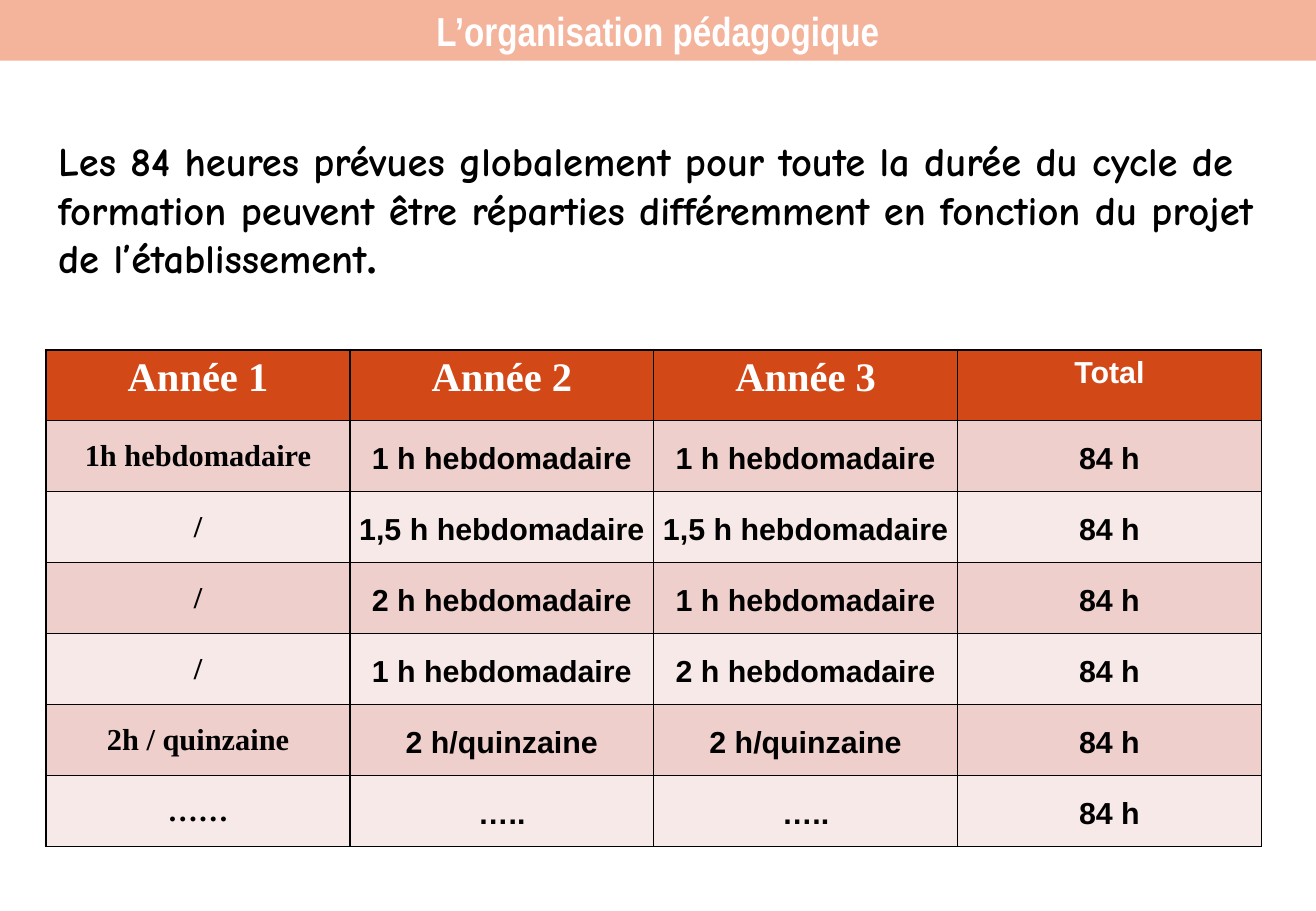
from lxml import etree
from pptx import Presentation
from pptx.dml.color import RGBColor
from pptx.enum.text import MSO_ANCHOR, MSO_AUTO_SIZE, PP_ALIGN
from pptx.oxml.ns import qn
from pptx.util import Inches, Pt

CENTER, LEFT = PP_ALIGN.CENTER, PP_ALIGN.LEFT
TOP, MIDDLE = MSO_ANCHOR.TOP, MSO_ANCHOR.MIDDLE
NO_FIT = MSO_AUTO_SIZE.NONE

COLORS = {
    "banner": "F4B39B", "header": "D34817", "odd": "EFCFCC", "even": "F7E9E8",
    "light": "FFFFFF", "dark": "000000",
}
SANS, NARROW, SERIF, COMIC = "Arial", "Arial Narrow", "Times New Roman", "Comic Neue"

TITLE = "L’organisation pédagogique"
INTRO = ("Les 84 heures prévues globalement pour toute la durée du cycle de "
         "formation peuvent être réparties différemment en fonction du projet "
         "de l’établissement")
SCHEDULE = [
    ("Année 1", "Année 2", "Année 3", "Total"),
    ("1h hebdomadaire", "1 h hebdomadaire", "1 h hebdomadaire", "84 h"),
    ("/", "1,5 h hebdomadaire", "1,5 h hebdomadaire", "84 h"),
    ("/", "2 h hebdomadaire", "1 h hebdomadaire", "84 h"),
    ("/", "1 h hebdomadaire", "2 h hebdomadaire", "84 h"),
    ("2h / quinzaine", "2 h/quinzaine", "2 h/quinzaine", "84 h"),
    ("……", "…..", "…..", "84 h"),
]


def rgb(name):
    return RGBColor.from_string(COLORS[name])


def set_attrs(target, values):
    for name, value in values.items():
        setattr(target, name, value)


def add_run(p, text, font, size, color):
    r = p.add_run()
    r.text = text
    set_attrs(r.font, {"name": font, "size": Pt(size), "bold": True})
    r.font.color.rgb = rgb(color)


def place(sp, box):
    sp.left, sp.top, sp.width, sp.height = (Inches(v) for v in box)


def add_title(s, box):
    sp = s.shapes.title
    place(sp, box)
    sp.fill.solid()
    sp.fill.fore_color.rgb = rgb("banner")
    tf = sp.text_frame
    set_attrs(tf, {"auto_size": NO_FIT, "vertical_anchor": TOP, "word_wrap": True})
    p = tf.paragraphs[0]
    p.alignment = CENTER
    add_run(p, TITLE, NARROW, 24, "light")


def add_intro(s, box):
    tf = s.shapes.add_textbox(*(Inches(v) for v in box)).text_frame
    tf.word_wrap = True
    p = tf.paragraphs[0]
    p.alignment = LEFT
    add_run(p, INTRO, COMIC, 24, "dark")
    add_run(p, ".", SERIF, 24, "dark")


def add_borders(cell):
    tcPr = cell._tc.get_or_add_tcPr()
    # Border lines come before the fill in the cell properties
    for i, side in enumerate(("a:lnL", "a:lnR", "a:lnT", "a:lnB")):
        ln = etree.Element(qn(side), w=str(Pt(1)))
        fill = etree.SubElement(ln, qn("a:solidFill"))
        etree.SubElement(fill, qn("a:srgbClr"), val=COLORS["dark"])
        tcPr.insert(i, ln)


def fill_cell(cell, text, row, col):
    header = row == 0
    fill = "header" if header else "odd" if row % 2 else "even"
    cell.fill.solid()
    cell.fill.fore_color.rgb = rgb(fill)
    cell.vertical_anchor = TOP if header else MIDDLE
    p = cell.text_frame.paragraphs[0]
    p.alignment = CENTER
    if not header and col > 0:
        set_attrs(cell, {"margin_left": Inches(0.07), "margin_right": Inches(0.07),
                         "margin_top": 0, "margin_bottom": 0})
        p.line_spacing = 1.15
    serif = col < 3 if header else col == 0
    add_run(p, text, SERIF if serif else SANS, 24 if header and serif else 18,
            "light" if header else "dark")
    add_borders(cell)


def add_schedule(s, box):
    table = s.shapes.add_table(len(SCHEDULE), len(SCHEDULE[0]),
                               *(Inches(v) for v in box)).table
    for row, texts in enumerate(SCHEDULE):
        for col, text in enumerate(texts):
            fill_cell(table.cell(row, col), text, row, col)


def main():
    prs = Presentation()
    prs.slide_width, prs.slide_height = Inches(10.83), Inches(7.5)
    s = prs.slides.add_slide(prs.slide_layouts[5])
    # Title banner, schedule table, introduction
    add_title(s, (0, 0, 10.83, 0.5))
    add_schedule(s, (0.38, 2.88, 10, 4.09))
    add_intro(s, (0.38, 1.07, 10.24, 1.31))
    prs.save("out.pptx")


if __name__ == "__main__":
    main()
